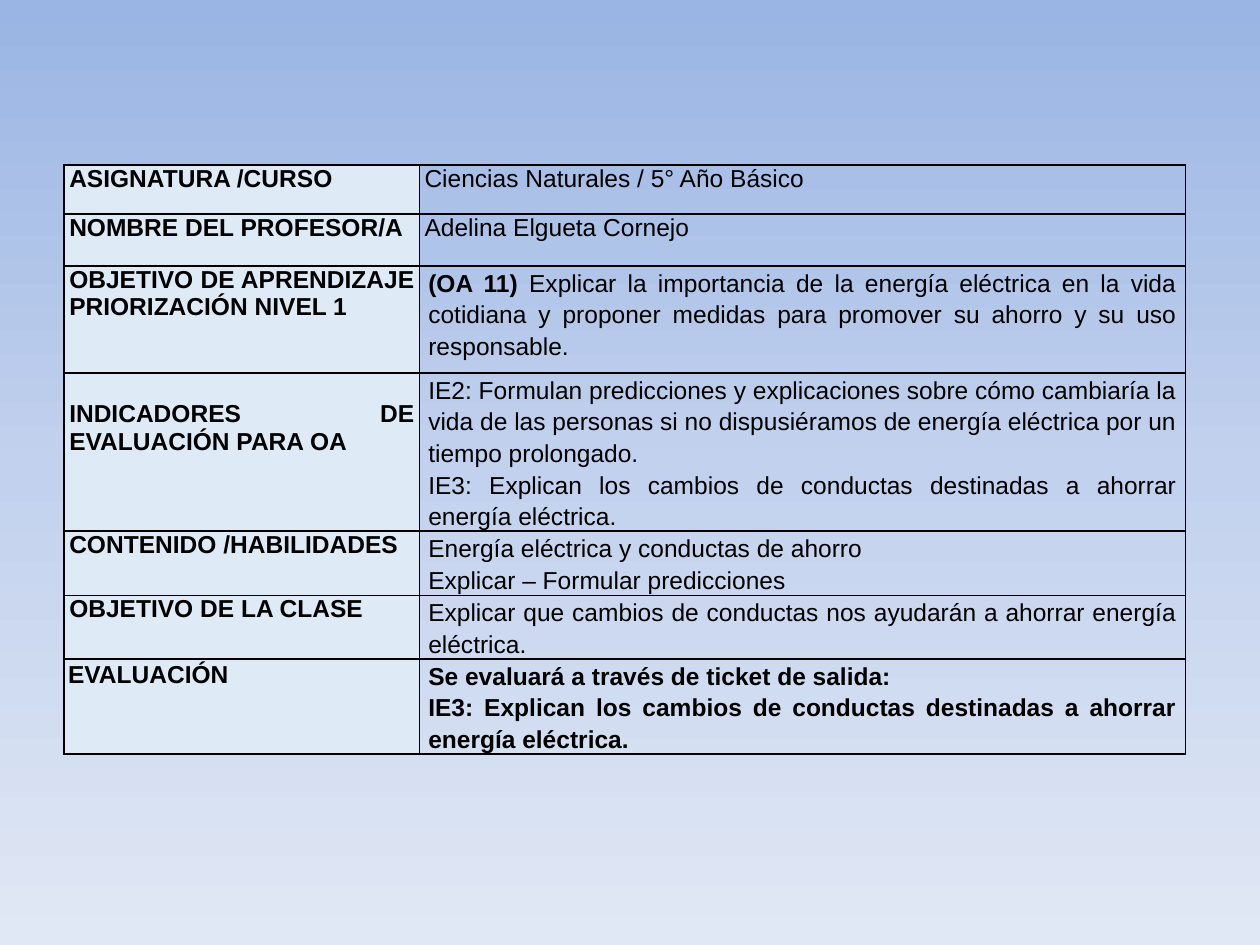
from copy import deepcopy

from pptx import Presentation
from pptx.dml.color import RGBColor
from pptx.enum.text import PP_ALIGN as Align
from pptx.oxml.ns import qn
from pptx.oxml.xmlchemy import OxmlElement as Element
from pptx.util import Inches, Pt

BLACK = RGBColor(0x00, 0x00, 0x00)
LABEL_FILL = RGBColor(0xDE, 0xEA, 0xF6)
GRADIENT = [
    (0, RGBColor(0x9A, 0xB5, 0xE4)),
    (0.5, RGBColor(0xC2, 0xD1, 0xED)),
    (1, RGBColor(0xE1, 0xE8, 0xF5)),
]
FONT, SIZE = "Arial", 14
TIGHT, WIDE = 0.04, 0.07  # side margins of cells, inches
LINE = 0.22  # one text line, inches

TABLE_BOX = (0.51, 1.31, 8.9, 4.66)
COLUMNS = (2.82, 6.08)

IE3 = "IE3: Explican los cambios de conductas destinadas a ahorrar energía eléctrica."

# Row height, label, label margins (side, top), value side margin, line spacing,
# value paragraphs as lists of (text, bold) runs
ROWS = [
    (0.39, "ASIGNATURA /CURSO", (TIGHT, 0), TIGHT, None,
     [[("Ciencias Naturales / 5° Año Básico", False)]]),
    (0.41, "NOMBRE DEL PROFESOR/A", (TIGHT, 0), TIGHT, None,
     [[("Adelina Elgueta Cornejo", False)]]),
    (0.85, "OBJETIVO DE APRENDIZAJE PRIORIZACIÓN NIVEL 1", (TIGHT, 0), WIDE, 1.15,
     [[("(OA 11) ", True),
       ("Explicar la importancia de la energía eléctrica en la vida cotidiana y "
        "proponer medidas para promover su ahorro y su uso responsable.", False)]]),
    (1.25, "INDICADORES DE EVALUACIÓN PARA OA", (TIGHT, LINE), WIDE, 1.15,
     [[("IE2: Formulan predicciones y explicaciones sobre cómo cambiaría la vida de "
        "las personas si no dispusiéramos de energía eléctrica por un tiempo "
        "prolongado.", False)],
      [(IE3, False)]]),
    (0.51, "CONTENIDO /HABILIDADES", (TIGHT, 0), WIDE, 1.15,
     [[("Energía eléctrica y conductas de ahorro", False)],
      [("Explicar – Formular predicciones", False)]]),
    (0.5, "OBJETIVO DE LA CLASE", (TIGHT, 0), WIDE, 1.15,
     [[("Explicar que cambios de conductas nos ayudarán a ahorrar energía eléctrica.",
        False)]]),
    (0.75, "EVALUACIÓN", (0.03, 0.02), WIDE, 1.15,
     [[("Se evaluará a través de ticket de salida:", True)],
      [(IE3, True)]]),
]


def paint_background(slide):
    """Vertical gradient with three stops."""
    fill = slide.background.fill
    fill.gradient()
    fill.gradient_angle = 270
    stops = slide.element.find(".//" + qn("a:gsLst"))
    stops.append(deepcopy(stops[0]))
    for stop, (position, color) in zip(fill.gradient_stops, GRADIENT):
        stop.position = position
        stop.color.rgb = color


def add_borders(cell):
    """Black 1 pt line on all four sides, placed before the cell's fill."""
    props = cell._tc.get_or_add_tcPr()
    for i, side in enumerate(("lnL", "lnR", "lnT", "lnB")):
        line = Element(f"a:{side}")
        line.set("w", str(Pt(1)))
        solid = Element("a:solidFill")
        color = Element("a:srgbClr")
        color.set("val", str(BLACK))
        solid.append(color)
        line.append(solid)
        props.insert(i, line)


def fill_cell(cell, paragraphs, side, top=0, spacing=None, color=None):
    cell.margin_left = cell.margin_right = Inches(side)
    cell.margin_top, cell.margin_bottom = Inches(top), 0
    if color is None:
        cell.fill.background()
    else:
        cell.fill.solid()
        cell.fill.fore_color.rgb = color
    add_borders(cell)

    tf = cell.text_frame
    for i, runs in enumerate(paragraphs):
        p = tf.add_paragraph() if i else tf.paragraphs[0]
        p.alignment = Align.JUSTIFY
        if spacing:
            p.line_spacing = spacing
        for text, bold in runs:
            r = p.add_run()
            r.text = text
            r.font.name, r.font.size, r.font.bold = FONT, Pt(SIZE), bold
            r.font.color.rgb = BLACK


def add_lesson_table(slide, box):
    """Lesson plan: labels on the left, values on the right."""
    frame = slide.shapes.add_table(len(ROWS), len(COLUMNS), *map(Inches, box))
    table = frame.table
    table.first_row = table.horz_banding = False
    for column, width in zip(table.columns, COLUMNS):
        column.width = Inches(width)
    for i, (height, label, margins, side, spacing, value) in enumerate(ROWS):
        table.rows[i].height = Inches(height)
        fill_cell(table.cell(i, 0), [[(label, True)]], *margins, color=LABEL_FILL)
        fill_cell(table.cell(i, 1), value, side, spacing=spacing)


def main():
    prs = Presentation()
    prs.slide_width, prs.slide_height = Inches(10), Inches(7.5)
    slide = prs.slides.add_slide(prs.slide_layouts[6])
    paint_background(slide)
    add_lesson_table(slide, TABLE_BOX)
    prs.save("out.pptx")


if __name__ == "__main__":
    main()
